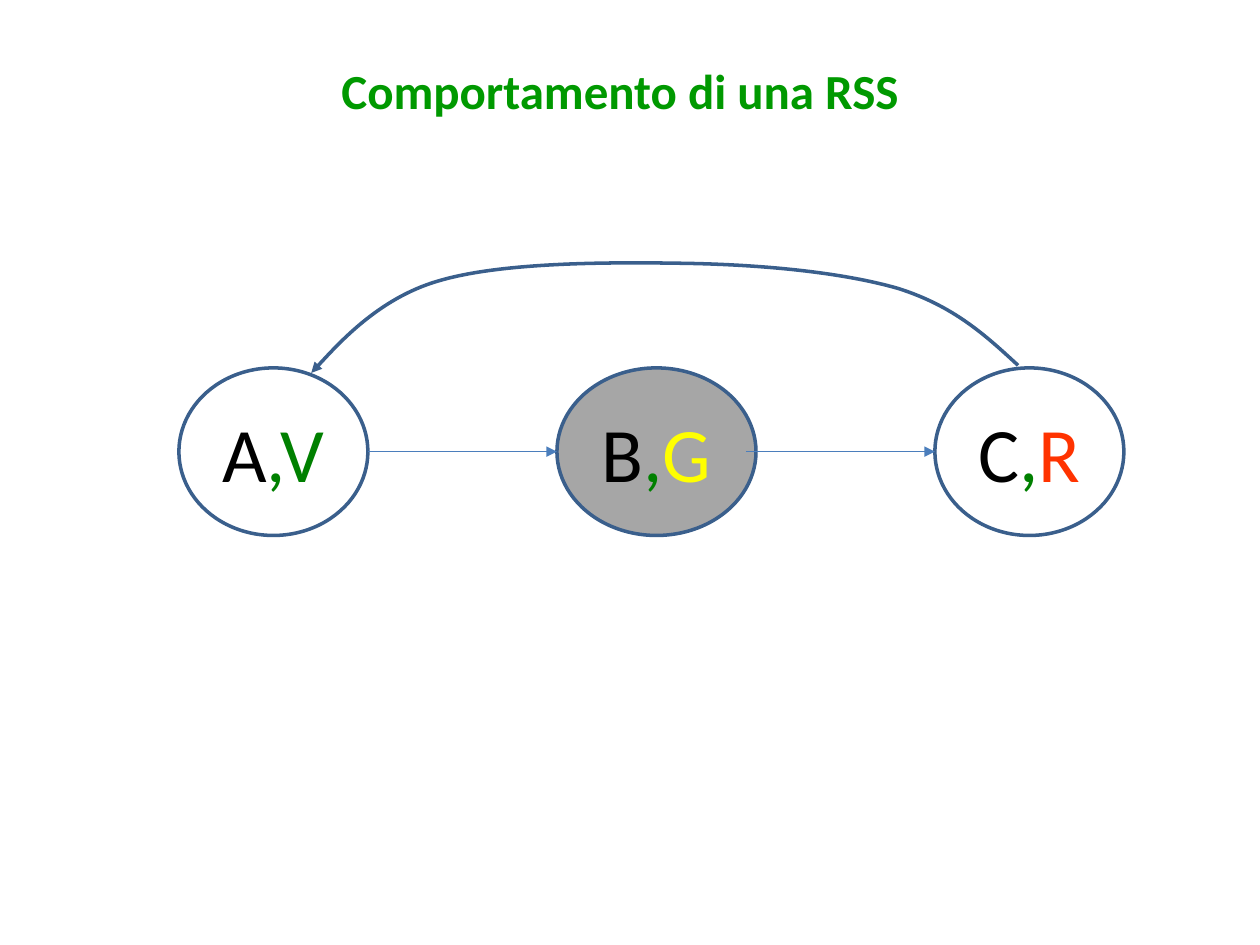
import pptx
import pptx.util
import pptx.dml.color
import pptx.enum.shapes
import pptx.enum.text
import pptx.oxml
import pptx.oxml.ns
from pptx.util import Inches, Pt

RGBColor = pptx.dml.color.RGBColor
TITLE_GREEN = RGBColor(0x00, 0x99, 0x00)
GREEN = RGBColor(0x00, 0x80, 0x00)
YELLOW = RGBColor(0xFF, 0xFF, 0x00)
RED = RGBColor(0xFF, 0x33, 0x00)
BLACK = RGBColor(0x00, 0x00, 0x00)
WHITE = RGBColor(0xFF, 0xFF, 0xFF)
GRAY = RGBColor(0xA6, 0xA6, 0xA6)
OUTLINE = RGBColor(0x3A, 0x5F, 0x8C)
ARROW = RGBColor(0x4B, 0x7E, 0xBC)

TITLE = "Comportamento di una RSS"
# width, fill, coloured pieces of the label
STATES = [
    (1.5, WHITE, [("A", BLACK), (",V", GREEN)]),
    (1.58, GRAY, [("B", BLACK), (",", GREEN), ("G", YELLOW)]),
    (1.5, WHITE, [("C", BLACK), (",", GREEN), ("R", RED)]),
]
# start point, then three control points for each cubic curve
RETURN_ARC = [
    (8.08, 2.9),
    (7.82, 2.66), (7.57, 2.43), (7.13, 2.29),
    (6.68, 2.16), (6.04, 2.1), (5.43, 2.09),
    (4.83, 2.08), (3.98, 2.08), (3.48, 2.23),
    (2.99, 2.37), (2.47, 2.96), (2.47, 2.96),
]
LEFT, TOP, PITCH, HEIGHT, GAP = 1.42, 2.92, 3, 1.33, 1.5


def add_run(paragraph, text, **font_format):
    run = paragraph.add_run()
    run.text = text
    color = font_format.pop("color")
    for attribute, value in {"name": "Calibri", **font_format}.items():
        setattr(run.font, attribute, value)
    run.font.color.rgb = color


def style_line(line, color, width):
    line.color.rgb = color
    line.width = Pt(width)


def add_arrowhead(line):
    head = pptx.oxml.parse_xml(
        f'<a:tailEnd {pptx.oxml.ns.nsdecls("a")} type="triangle"/>')
    line._get_or_add_ln().append(head)


def add_state(slide, column, width, fill, label):
    state = slide.shapes.add_shape(
        pptx.enum.shapes.MSO_SHAPE.OVAL, Inches(LEFT + column * PITCH),
        Inches(TOP), Inches(width), Inches(HEIGHT))
    state.shadow.inherit = False
    state.fill.solid()
    state.fill.fore_color.rgb = fill
    style_line(state.line, OUTLINE, 2)
    frame = state.text_frame
    frame.word_wrap = False
    frame.vertical_anchor = pptx.enum.text.MSO_ANCHOR.MIDDLE
    paragraph = frame.paragraphs[0]
    paragraph.alignment = pptx.enum.text.PP_ALIGN.CENTER
    for text, color in label:
        add_run(paragraph, text, size=Pt(44), color=color)


def add_transition(slide, column):
    """Draw the arrow that ends at the state in this column."""
    end = LEFT + column * PITCH
    middle = Inches(TOP + HEIGHT / 2)
    arrow = slide.shapes.add_connector(
        pptx.enum.shapes.MSO_CONNECTOR.STRAIGHT,
        Inches(end - GAP), middle, Inches(end), middle)
    style_line(arrow.line, ARROW, 0.75)
    add_arrowhead(arrow.line)
    arrow._element.spPr.append(pptx.oxml.parse_xml(
        f'<a:effectLst {pptx.oxml.ns.nsdecls("a")}/>'))


def add_curve(slide, points):
    """Draw an open curve, joining each three line steps into one cubic."""
    start, *controls = [(Inches(x), Inches(y)) for x, y in points]
    builder = slide.shapes.build_freeform(*start)
    builder.add_line_segments(controls, close=False)
    curve = builder.convert_to_shape()
    steps = curve._element.findall(".//" + pptx.oxml.ns.qn("a:lnTo"))
    for i in range(0, len(steps), 3):
        cubic = pptx.oxml.parse_xml(
            f'<a:cubicBezTo {pptx.oxml.ns.nsdecls("a")}/>')
        steps[i].addprevious(cubic)
        for step in steps[i:i + 3]:
            cubic.append(step[0])
            step.getparent().remove(step)
    curve.shadow.inherit = False
    curve.fill.background()
    style_line(curve.line, OUTLINE, 2)
    add_arrowhead(curve.line)


def add_title(slide):
    title = slide.shapes.add_textbox(
        Inches(2.71), Inches(0.48), Inches(5.13), Inches(0.47))
    frame = title.text_frame
    margins = ("margin_left", "margin_top", "margin_right", "margin_bottom")
    for attribute, value in {**dict.fromkeys(margins, 0), "word_wrap": True}.items():
        setattr(frame, attribute, value)
    add_run(frame.paragraphs[0], TITLE, size=Pt(28), bold=True, color=TITLE_GREEN)


def main():
    presentation = pptx.Presentation()
    presentation.slide_width = Inches(10)
    presentation.slide_height = Inches(7.5)
    slide = presentation.slides.add_slide(presentation.slide_layouts[6])
    add_title(slide)
    for column, state in enumerate(STATES):
        add_state(slide, column, *state)
    for column in range(1, len(STATES)):
        add_transition(slide, column)
    add_curve(slide, RETURN_ARC)
    presentation.save("out.pptx")


if __name__ == "__main__":
    main()
